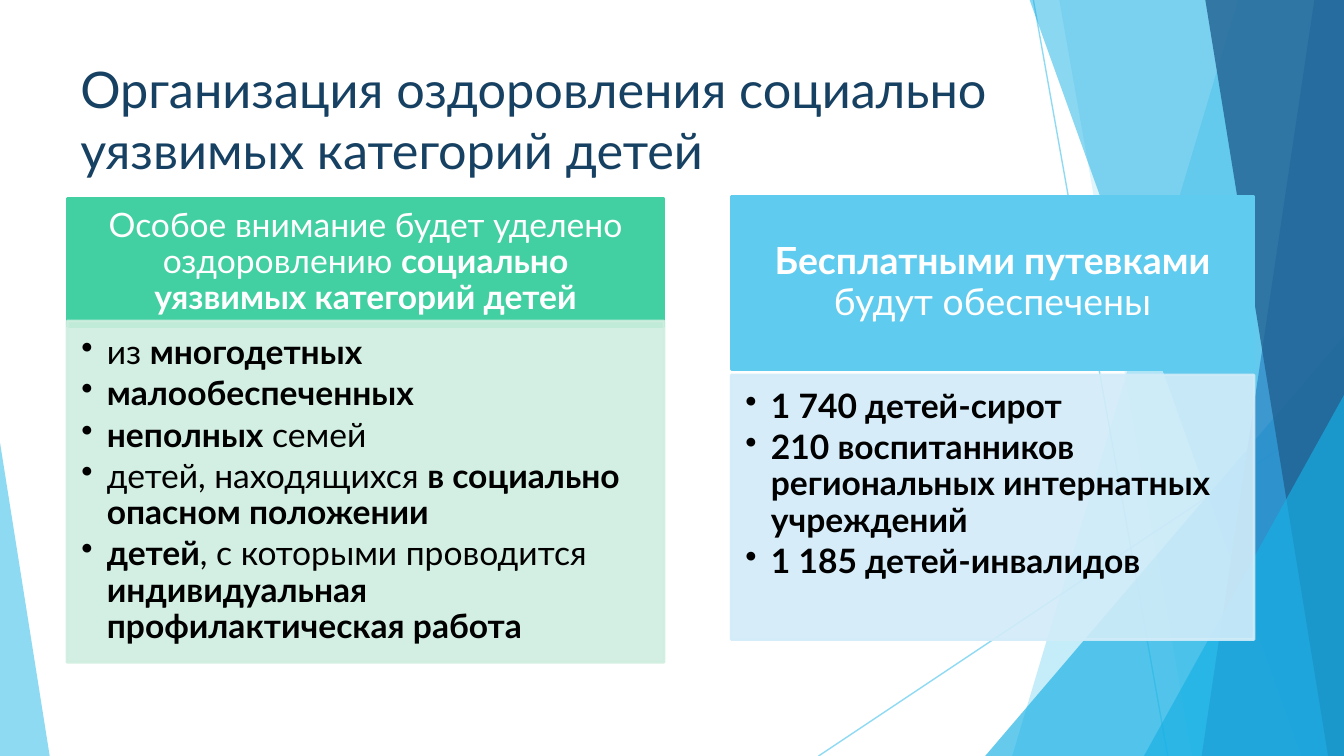
"""Build the slide on health recreation for socially vulnerable children."""
from lxml.etree import SubElement
from pptx import Presentation
from pptx.dml.color import RGBColor as RGB
from pptx.enum.shapes import MSO_CONNECTOR as Link, MSO_SHAPE as Preset
from pptx.enum.text import MSO_ANCHOR as Anchor, PP_ALIGN as Align
from pptx.oxml.ns import qn
from pptx.util import Cm, Pt

WIDTH, HEIGHT = 25.4, 14.29
FONT = "Lato"
COLORS = {
    "title": "174162", "white": "FFFFFF", "black": "000000",
    "sky": "5FCBEF", "azure": "17B0E4", "blue": "2E83C3", "navy": "226292",
    "green": "42D0A2", "mint": "CFEEE0", "ice": "D2ECF9",
}
TITLE = "Организация оздоровления социально уязвимых категорий детей"
RAYS = [(19.53, 0, 22.07, HEIGHT), (WIDTH, 7.67, 15.47, HEIGHT)]
DECOR = [
    ("facet", (23.4, 19.13), "sky", 36),
    ("facet", (20.02, 22.53), "sky", 20),
    ("triangle", (18.62, 6.35, WIDTH, 1), "azure", 66),
    ("facet", (19.46, 24.59), "azure", 50),
    ("facet", (24.84, 22.71), "blue", 70),
    ("facet", (22.78, 25.1), "navy", 80),
    ("triangle", (21.62, 7.47, WIDTH, 1), "azure", 66),
    ("triangle", (0, 8.36, 0.94, 0), "sky", 70),
]
PANELS = [
    {
        "left": 1.27, "width": 11.28, "size": 18,
        "head": (3.76, 2.41, "green"), "body": (6.07, 6.45, "mint"),
        "heading": [("Особое внимание будет уделено оздоровлению ", False),
                    ("социально уязвимых категорий детей", True)],
        "items": [
            [("из ", False), ("многодетных", True)],
            [("малообеспеченных", True)],
            [("неполных", True), (" семей", False)],
            [("детей, находящихся ", False), ("в социально опасном положении", True)],
            [("детей", True), (", с которыми проводится ", False),
             ("индивидуальная профилактическая работа", True)],
        ],
    },
    {
        "left": 13.82, "width": 9.88, "size": 20,
        "head": (3.71, 3.28, "sky"), "body": (7.09, 5, "ice"),
        "heading": [("Бесплатными путевками ", True), ("будут обеспечены", False)],
        "items": [
            [("1 740 детей-сирот", True)],
            [("210 воспитанников региональных интернатных учреждений", True)],
            [("1 185 детей-инвалидов", True)],
        ],
    },
]


def set_all(target, values):
    for name, value in values.items():
        setattr(target, name, value)


def paint(shape, color, alpha=100, outline=False):
    shape.shadow.inherit = False
    shape.fill.solid()
    shape.fill.fore_color.rgb = RGB.from_string(COLORS[color])
    if outline:
        shape.line.color.rgb = RGB.from_string(COLORS[color])
        shape.line.width = Pt(1.5)
    else:
        shape.line.fill.background()
    fade(shape, alpha)


def fade(shape, alpha):
    if alpha < 100:
        for tint in shape.element.spPr.iter(qn("a:srgbClr")):
            SubElement(tint, qn("a:alpha"), val=str(alpha * 1000))


def frame_text(shape, insets, anchor):
    left, top, right, bottom = map(Cm, insets)
    set_all(shape.text_frame, {
        "word_wrap": True, "vertical_anchor": anchor, "margin_left": left,
        "margin_top": top, "margin_right": right, "margin_bottom": bottom,
    })
    return shape.text_frame


def write(frame, paragraphs, size, color, bullet=False, **layout):
    for index, spans in enumerate(paragraphs):
        para = frame.add_paragraph() if index else frame.paragraphs[0]
        set_all(para, layout)
        if bullet:
            properties = para._p.get_or_add_pPr()
            properties.set("marL", str(Cm(0.48)))
            properties.set("indent", str(-Cm(0.48)))
            SubElement(properties, qn("a:buChar"), char="•")
        for text, bold in spans:
            span = para.add_run()
            span.text = text
            set_all(span.font, {"name": FONT, "size": Pt(size), "bold": bold})
            span.font.color.rgb = RGB.from_string(COLORS[color])


def add_ray(page, ends):
    ray = page.shapes.add_connector(Link.STRAIGHT, *map(Cm, ends))
    ray.line.color.rgb = RGB.from_string(COLORS["sky"])
    ray.line.width = Pt(0.75)
    fade(ray, 70)
    SubElement(ray.element.spPr, qn("a:effectLst"))


def add_facet(page, top_x, bottom_x):
    points = [(WIDTH, 0), (WIDTH, HEIGHT), (bottom_x, HEIGHT)]
    outline = page.shapes.build_freeform(Cm(top_x), 0)
    outline.add_line_segments([(Cm(x), Cm(y)) for x, y in points], close=True)
    return outline.convert_to_shape()


def add_triangle(page, left, top, right, apex):
    triangle = page.shapes.add_shape(
        Preset.ISOSCELES_TRIANGLE, Cm(left), Cm(top), Cm(right - left), Cm(HEIGHT - top))
    triangle.adjustments[0] = apex
    return triangle


def add_block(page, panel, part, alpha=100):
    top, height, color = panel[part]
    block = page.shapes.add_shape(
        Preset.RECTANGLE, Cm(panel["left"]), Cm(top), Cm(panel["width"]), Cm(height))
    paint(block, color, alpha, outline=True)
    return block


def add_panel(page, panel):
    frame = frame_text(add_block(page, panel, "head"), (0.38, 0.21, 0.38, 0.21), Anchor.MIDDLE)
    write(frame, [panel["heading"]], panel["size"], "white",
          alignment=Align.CENTER, line_spacing=0.9)
    frame = frame_text(add_block(page, panel, "body", 90), (0.27, 0.27, 0.36, 0.41), Anchor.TOP)
    write(frame, panel["items"], 18, "black", bullet=True,
          alignment=Align.LEFT, line_spacing=0.9, space_after=Pt(2.7))


def main():
    deck = Presentation()
    set_all(deck, {"slide_width": Cm(WIDTH), "slide_height": Cm(HEIGHT)})
    page = deck.slides.add_slide(deck.slide_layouts[6])
    for ends in RAYS:
        add_ray(page, ends)
    makers = {"facet": add_facet, "triangle": add_triangle}
    for kind, geometry, color, alpha in DECOR:
        paint(makers[kind](page, *geometry), color, alpha)
    box = page.shapes.add_textbox(Cm(1.27), Cm(0.97), Cm(17.91), Cm(2.74))
    frame = frame_text(box, (0.25, 0.13, 0.25, 0.13), Anchor.TOP)
    write(frame, [[(TITLE, False)]], 27, "title")
    for panel in PANELS:
        add_panel(page, panel)
    deck.save("out.pptx")


if __name__ == "__main__":
    main()
